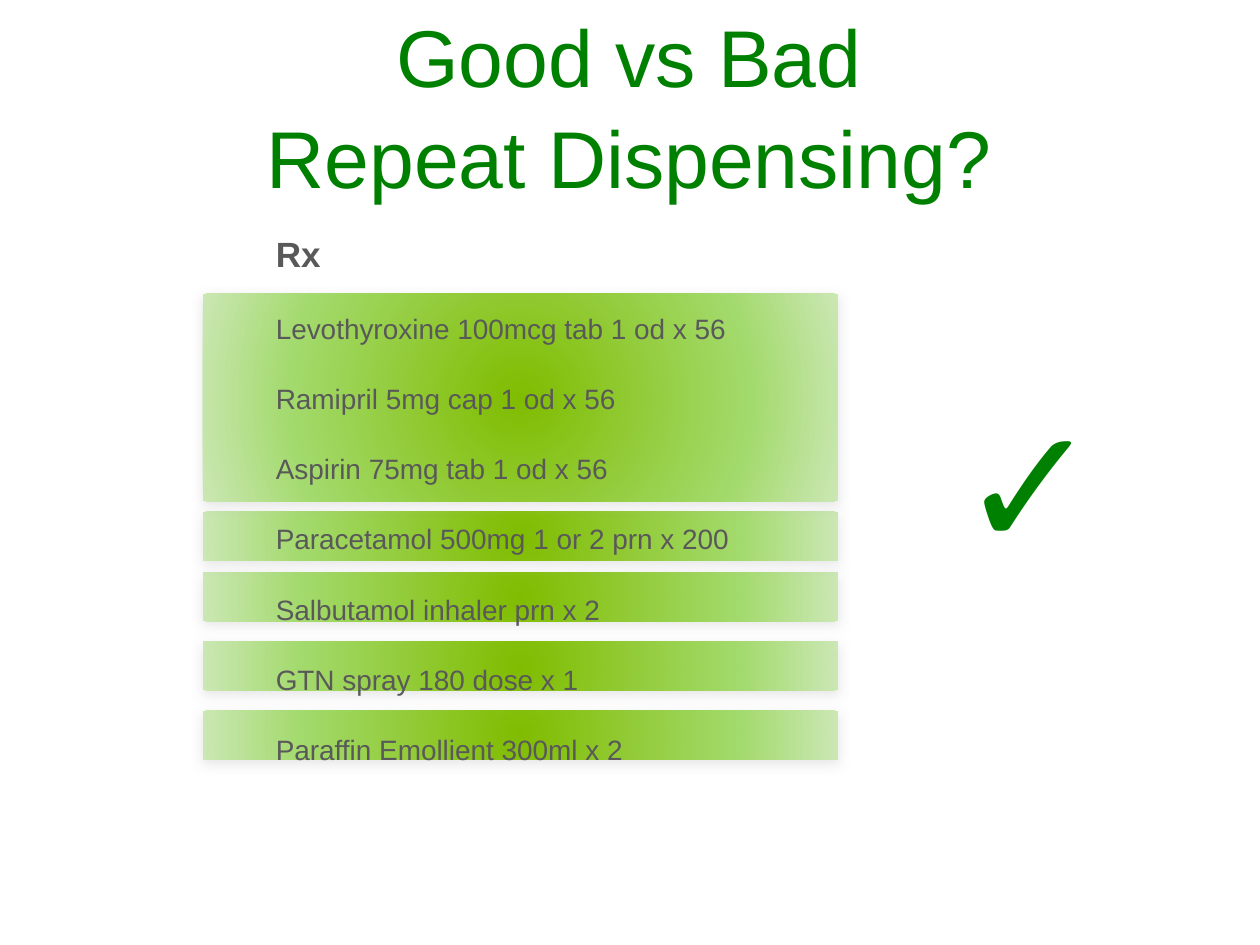
from lxml import etree
from pptx import Presentation
from pptx import util as u
from pptx.dml import color
from pptx.enum import shapes, text
from pptx.oxml import ns

GREEN, GREY, SHADOW = "008000", "595959", "C0C0C0"
GRADIENT = {0: "80BC00", 69: "A3DA6D", 100: "CBE7B4"}


def rgb(value):
    return color.RGBColor.from_string(value)


def add_node(parent, tag, **attributes):
    values = {name: str(value) for name, value in attributes.items()}
    return etree.SubElement(parent, ns.qn(f"a:{tag}"), values)


def apply(target, values):
    for name, value in values.items():
        setattr(target, name, value)


class PrescriptionSlide:
    """Hold the text style and the current slide, and add its elements."""

    font_name = "Arial"

    def __init__(self, slide):
        self.slide = slide

    def band(self, left, top, width, height):
        band = self.slide.shapes.add_shape(
            shapes.MSO_SHAPE.RECTANGLE, *map(u.Inches, (left, top, width, height)))
        band.line.fill.background()
        band.fill.gradient()
        band.shadow.inherit = False
        properties = band.element.spPr

        gradient = properties.find(ns.qn("a:gradFill"))
        gradient.clear()
        gradient.set("rotWithShape", "1")
        stops = add_node(gradient, "gsLst")
        for position, shade in GRADIENT.items():
            add_node(add_node(stops, "gs", pos=position * 1000), "srgbClr", val=shade)
        circle = add_node(gradient, "path", path="circle")
        add_node(circle, "fillToRect", **dict.fromkeys("ltrb", 100000))

        effects = properties.find(ns.qn("a:effectLst"))
        shadow = add_node(effects, "outerShdw", blurRad=u.Pt(7), dist=u.Pt(2),
                          dir=90 * 60000, rotWithShape=0)
        add_node(add_node(shadow, "srgbClr", val=SHADOW), "alpha", val=40000)

    def text(self, left, top, width, height, lines, shade, frame=None, paragraph=None):
        box = self.slide.shapes.add_textbox(*map(u.Inches, (left, top, width, height)))
        body = box.text_frame
        apply(body, {"word_wrap": True, **(frame or {})})
        for index, (wording, size, bold) in enumerate(lines):
            line = body.paragraphs[0] if index == 0 else body.add_paragraph()
            line.text = wording
            apply(line, paragraph or {})
            if index == 0:
                line.space_before = u.Pt(0)
            apply(line.font, {"name": self.font_name, "size": u.Pt(size), "bold": bold})
            line.font.color.rgb = rgb(shade)


def main():
    deck = Presentation()
    apply(deck, {"slide_width": u.Inches(10), "slide_height": u.Inches(7.5)})
    page = PrescriptionSlide(deck.slides.add_slide(deck.slide_layouts[6]))

    single_bands = [(4.54 + 0.55 * row, 0.39) for row in (2, 1, 0)]
    for top, height in [*single_bands, (4.06, 0.39), (2.33, 1.65)]:
        page.band(1.61, top, 5.04, height)

    medicines = [
        "Levothyroxine 100mcg tab 1 od x 56",
        "Ramipril 5mg cap 1 od x 56",
        "Aspirin 75mg tab 1 od x 56",
        "Paracetamol 500mg 1 or 2 prn x 200",
        "Salbutamol inhaler prn x 2",
        "GTN spray 180 dose x 1",
        "Paraffin Emollient 300ml x 2",
    ]
    prescription = [("Rx", 20, True)] + [(item, 16, False) for item in medicines]
    page.text(2.09, 1.78, 5.98, 4.57, prescription, GREY,
              paragraph={"space_before": u.Pt(20), "line_spacing": 1.05})
    page.text(0.59, 0.21, 8.8, 1.46, [("Good vs Bad\vRepeat Dispensing?", 46, False)], GREEN,
              frame={"vertical_anchor": text.MSO_ANCHOR.BOTTOM},
              paragraph={"alignment": text.PP_ALIGN.CENTER, "line_spacing": 1.04})
    page.text(7.52, 2.96, 1.22, 1.72, [("✓", 96, False)], GREEN,
              frame={"word_wrap": False, "auto_size": text.MSO_AUTO_SIZE.SHAPE_TO_FIT_TEXT})
    deck.save("out.pptx")


if __name__ == "__main__":
    main()
